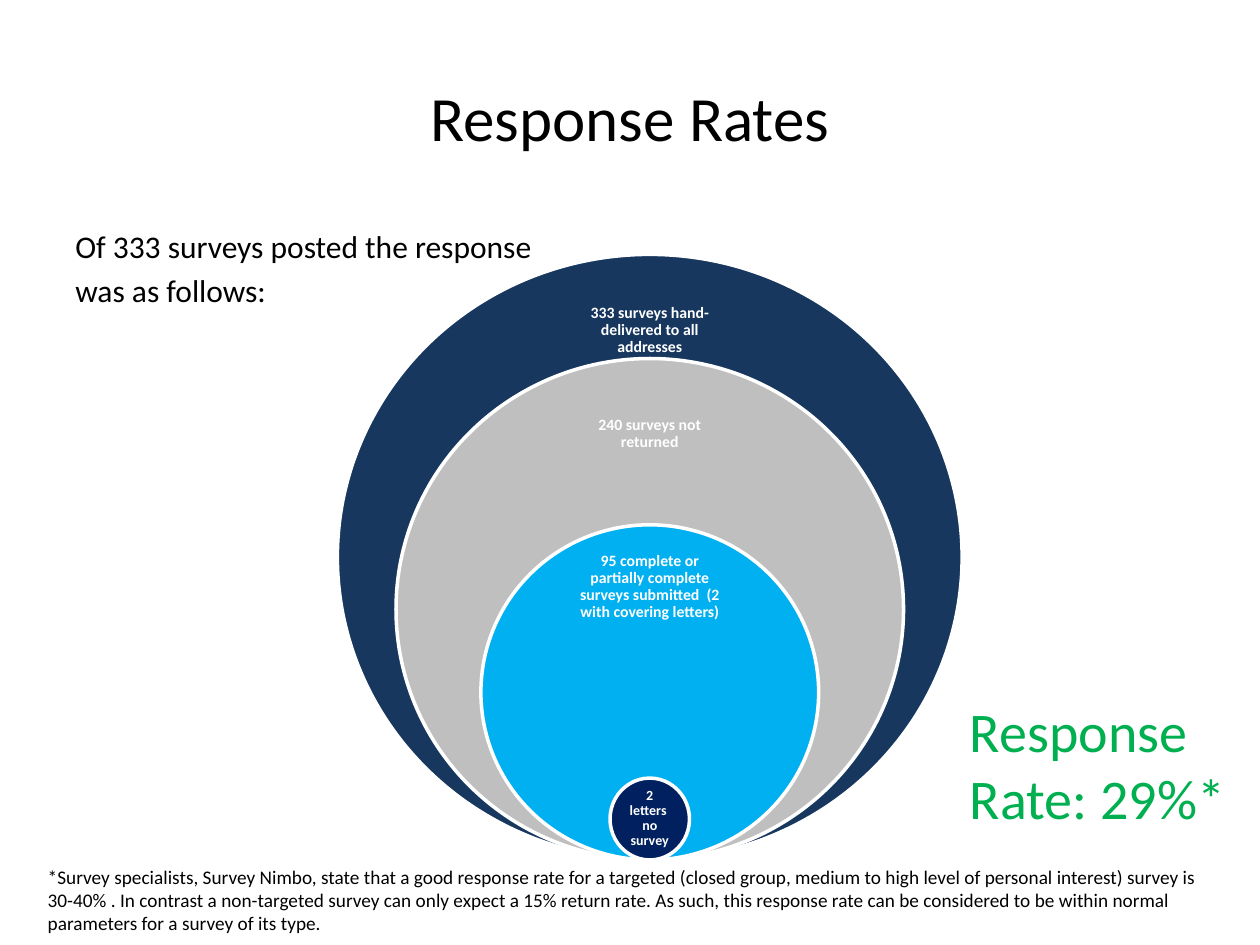
import pptx
import pptx.util
import pptx.dml.color
import pptx.enum.shapes
import pptx.enum.text

Pt = pptx.util.Pt
PP_ALIGN = pptx.enum.text.PP_ALIGN
MSO_ANCHOR = pptx.enum.text.MSO_ANCHOR


def rgb(color):
    return pptx.dml.color.RGBColor.from_string(color)


def add_text(tf, lines, size, color, align=PP_ALIGN.LEFT, bold=False):
    tf.word_wrap = True
    for i, line in enumerate(lines):
        p = tf.paragraphs[0] if i == 0 else tf.add_paragraph()
        p.text = line
        p.alignment = align
        p.font.name = "Calibri"
        p.font.size = Pt(size)
        p.font.bold = bold
        p.font.color.rgb = rgb(color)


prs = pptx.Presentation()
prs.slide_width = Pt(720)
prs.slide_height = Pt(540)
s = prs.slides.add_slide(prs.slide_layouts[5])

title = s.shapes.title
title.left, title.top, title.width, title.height = Pt(36), Pt(21.6), Pt(648), Pt(90)
title.text_frame.vertical_anchor = MSO_ANCHOR.MIDDLE
add_text(title.text_frame, ["Response Rates"], 36, "000000", PP_ALIGN.CENTER)

intro = s.shapes.add_textbox(Pt(36), Pt(126), Pt(648), Pt(60))
add_text(intro.text_frame, ["Of 333 surveys posted the response", "was as follows:"], 18, "000000")
for p in intro.text_frame.paragraphs:
    p.space_before = Pt(3.6)

center = 371.3
bottom = 491.4
circles = [
    (357, 346, "17375E", "333 surveys hand-delivered to all addresses", 162.7, 100, 52, 9, 5),
    (290, 286.5, "BFBFBF", "240 surveys not returned", 221.8, 101.5, 52, 9, 5),
    (193, 191.5, "00B0F0", "95 complete or partially complete surveys submitted  (2 with covering letters)",
     313.9, 90, 43, 9, 5),
    (45.4, 46.8, "002060", "2 letters  no survey", 455.8, 32.4, 23.8, 8, 4.3),
]
for width, height, fill, label, top, label_width, label_height, size, inset in circles:
    sp = s.shapes.add_shape(pptx.enum.shapes.MSO_SHAPE.OVAL, Pt(center - width / 2),
                            Pt(bottom - height), Pt(width), Pt(height))
    sp.shadow.inherit = False
    sp.fill.solid()
    sp.fill.fore_color.rgb = rgb(fill)
    sp.line.color.rgb = rgb("FFFFFF")
    sp.line.width = Pt(2)

    tb = s.shapes.add_textbox(Pt(center - label_width / 2), Pt(top), Pt(label_width), Pt(label_height))
    tf = tb.text_frame
    tf.margin_left = tf.margin_right = tf.margin_top = tf.margin_bottom = Pt(inset)
    tf.vertical_anchor = MSO_ANCHOR.MIDDLE
    add_text(tf, [label], size, "FFFFFF", PP_ALIGN.CENTER, True)
    tf.paragraphs[0].line_spacing = 0.9

rate = s.shapes.add_textbox(Pt(547.2), Pt(394.6), Pt(172.8), Pt(85))
add_text(rate.text_frame, ["Response Rate: 29%*"], 32, "00B050")

note = s.shapes.add_textbox(Pt(20.2), Pt(491), Pt(686.2), Pt(47.5))
add_text(note.text_frame, [
    "*Survey specialists, Survey Nimbo, state that a good response rate for a targeted "
    "(closed group, medium to high level of personal interest) survey is 30-40% . "
    "In contrast a non-targeted survey can only expect a 15% return rate. As such, this "
    "response rate can be considered to be within normal parameters for a survey of its type."
], 11, "000000")

prs.save("out.pptx")
